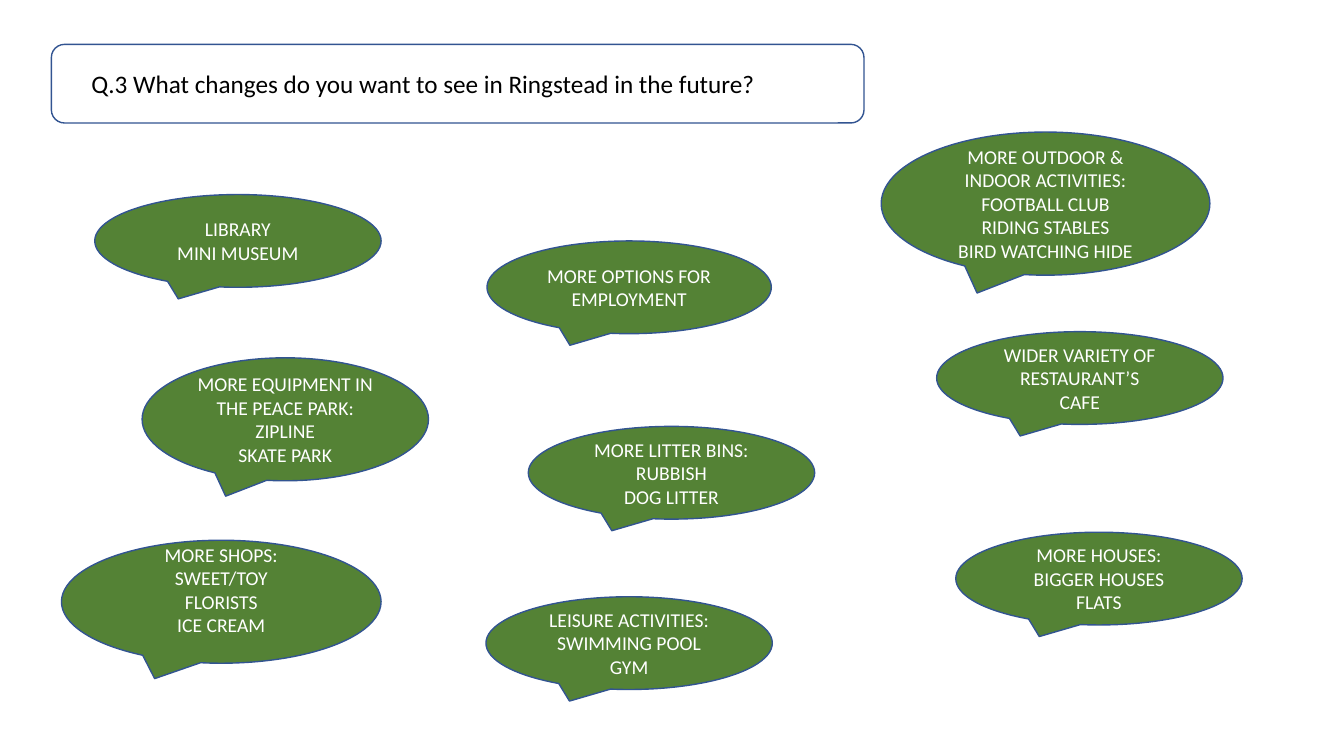
from pptx import Presentation
from pptx.dml.color import RGBColor
from pptx.enum.shapes import MSO_SHAPE
from pptx.enum.text import MSO_ANCHOR, PP_ALIGN
from pptx.util import Emu, Pt

PX = 9144  # one px is a hundredth of an inch
WHITE, BLACK, GREEN, BLUE = "FFFFFF", "000000", "548235", "325491"

# Left, top, width, height, lines of text, extra bottom inset
ANSWERS = [
    (94, 193, 284, 92, ["LIBRARY", "MINI MUSEUM"], 0),
    (141, 355, 284, 122,
     ["MORE EQUIPMENT IN THE PEACE PARK:", "ZIPLINE", "SKATE PARK"], 0),
    (483, 239, 282, 92, ["MORE OPTIONS FOR EMPLOYMENT"], 0),
    (874, 131, 326, 142,
     ["MORE OUTDOOR & INDOOR ACTIVITIES:", "FOOTBALL CLUB",
      "RIDING STABLES", "BIRD WATCHING HIDE"], 0),
    (524, 423, 284, 92, ["MORE LITTER BINS:", "RUBBISH", "DOG LITTER"], 0),
    (948, 528, 284, 92, ["MORE HOUSES:", "BIGGER HOUSES", "FLATS"], 0),
    (61, 536, 317, 122,
     ["MORE SHOPS:", "SWEET/TOY", "FLORISTS", "ICE CREAM"], 24),
    (482, 592, 284, 92, ["LEISURE ACTIVITIES:", "SWIMMING POOL", "GYM"], 0),
    (929, 329, 284, 92, ["WIDER VARIETY OF RESTAURANT’S", "CAFE"], 0),
]


def px(length):
    return Emu(length * PX)


def color(hex_value):
    return RGBColor.from_string(hex_value)


def set_format(target, values):
    for name, value in values.items():
        setattr(target, name, value)


def add_box(slide, kind, box, fill, lines, size, text_color, align, insets):
    """Outlined shape with one paragraph for each line of text."""
    shape = slide.shapes.add_shape(kind, *map(px, box))
    shape.shadow.inherit = False
    shape.fill.solid()
    shape.fill.fore_color.rgb = color(fill)
    shape.line.color.rgb = color(BLUE)
    shape.line.width = Pt(1)

    frame = shape.text_frame
    left, bottom = insets
    set_format(frame, {
        "word_wrap": True, "vertical_anchor": MSO_ANCHOR.MIDDLE,
        "margin_left": px(left), "margin_right": px(10),
        "margin_top": px(5), "margin_bottom": px(bottom),
    })
    for index, line in enumerate(lines):
        paragraph = frame.add_paragraph() if index else frame.paragraphs[0]
        paragraph.alignment = align
        run = paragraph.add_run()
        run.text = line
        set_format(run.font, {"name": "Calibri", "size": Pt(size)})
        run.font.color.rgb = color(text_color)


def add_question(slide, box, text):
    add_box(slide, MSO_SHAPE.ROUNDED_RECTANGLE, box, WHITE, [text], 18,
            BLACK, PP_ALIGN.LEFT, (36, 5))


def add_answer(slide, box, lines, extra_bottom):
    add_box(slide, MSO_SHAPE.OVAL_CALLOUT, box, GREEN, lines, 14,
            WHITE, PP_ALIGN.CENTER, (10, 5 + extra_bottom))


def main():
    presentation = Presentation()
    set_format(presentation, {"slide_width": px(1333), "slide_height": px(750)})
    slide = presentation.slides.add_slide(presentation.slide_layouts[6])

    # Question
    add_question(slide, (51, 44, 806, 78),
                 "Q.3 What changes do you want to see in Ringstead in the future?")

    # Speech bubbles
    for *box, lines, extra_bottom in ANSWERS:
        add_answer(slide, box, lines, extra_bottom)

    presentation.save("out.pptx")


if __name__ == "__main__":
    main()
